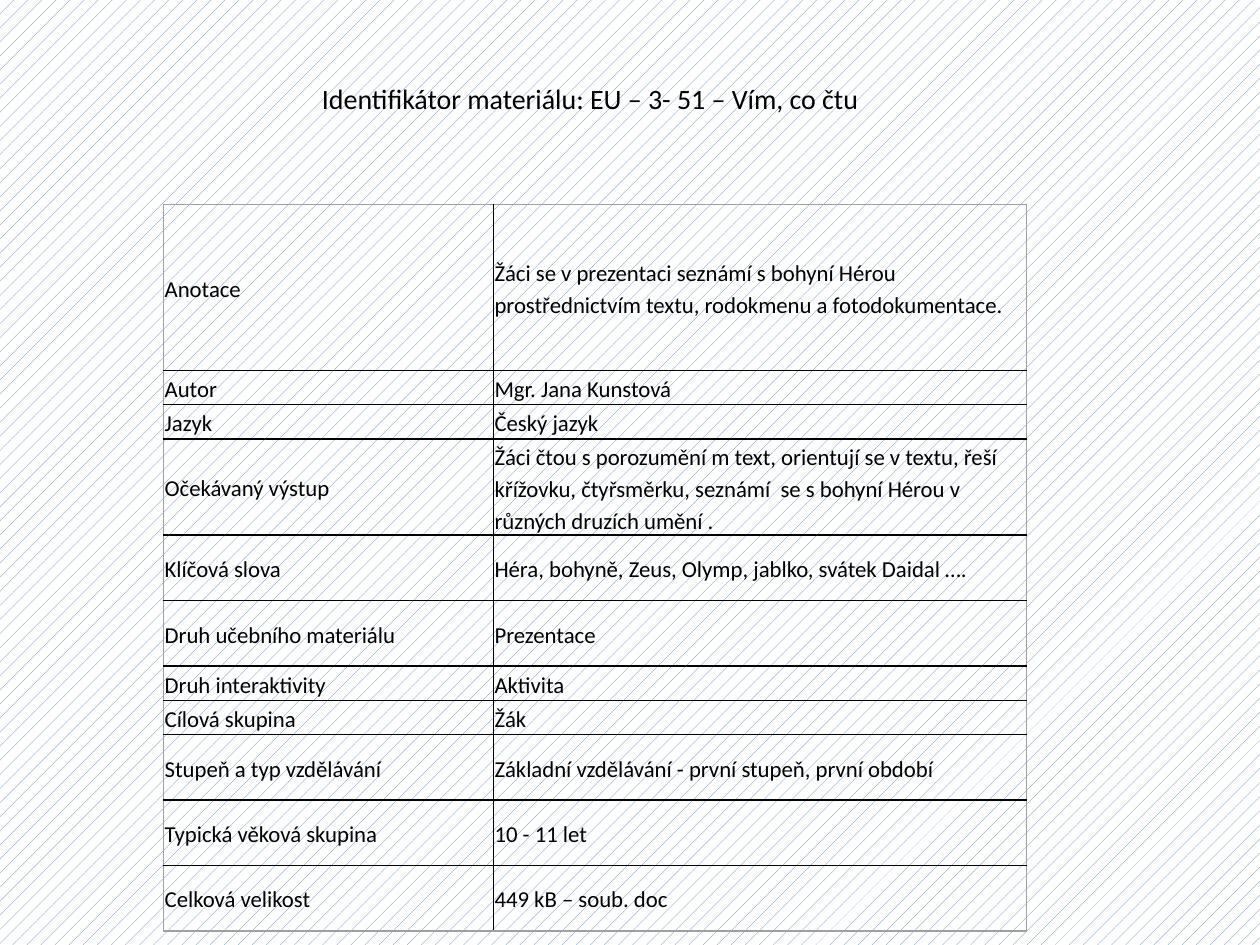
from dataclasses import dataclass

from lxml import etree
from pptx import Presentation
from pptx import util as u
from pptx.dml.color import RGBColor
from pptx.enum import dml, text
from pptx.oxml.ns import qn


@dataclass(frozen=True)
class Theme:
    font: str = "Calibri"
    title_size: int = 16
    cell_size: int = 13
    ink: str = "000000"
    frame: str = "A0A0A0"
    pattern: str = "4F81BD"
    paper: str = "FFFFFF"


THEME = Theme()
TITLE = "Identifikátor materiálu: EU – 3- 51 – Vím, co čtu"

# Row heights in centimetres
TALL, MEDIUM, LOW = 3.35, 1.32, 0.69
COLUMN_WIDTHS = (6.65, 10.74)
ROWS = [
    (TALL, "Anotace", "Žáci se v prezentaci seznámí s bohyní Hérou "
     "prostřednictvím textu, rodokmenu a fotodokumentace."),
    (LOW, "Autor", "Mgr. Jana Kunstová"),
    (LOW, "Jazyk", "Český jazyk"),
    (MEDIUM, "Očekávaný výstup", "Žáci čtou s porozumění m text, orientují se v textu, "
     "řeší křížovku, čtyřsměrku, seznámí  se s bohyní Hérou v různých druzích umění ."),
    (MEDIUM, "Klíčová slova", "Héra, bohyně, Zeus, Olymp, jablko, svátek Daidal …."),
    (MEDIUM, "Druh učebního materiálu", "Prezentace"),
    (LOW, "Druh interaktivity", "Aktivita"),
    (LOW, "Cílová skupina", "Žák"),
    (MEDIUM, "Stupeň a typ vzdělávání", "Základní vzdělávání - první stupeň, první období"),
    (MEDIUM, "Typická věková skupina", "10 - 11 let"),
    (MEDIUM, "Celková velikost", "449 kB – soub. doc"),
]


def set_values(target, values):
    for name, value in values.items():
        setattr(target, name, value)


def format_paragraph(paragraph, size, **values):
    set_values(paragraph, values)
    set_values(paragraph.font, {"name": THEME.font, "size": u.Pt(size), "bold": False})
    paragraph.font.color.rgb = RGBColor.from_string(THEME.ink)


def set_background(slide):
    fill = slide.background.fill
    fill.patterned()
    fill.pattern = dml.MSO_PATTERN.PERCENT_10
    fill.fore_color.rgb = RGBColor.from_string(THEME.pattern)
    fill.back_color.rgb = RGBColor.from_string(THEME.paper)


def set_title(slide):
    title = slide.shapes.title
    set_values(title, {"left": u.Cm(3.5), "top": u.Cm(1.52),
                       "width": u.Cm(16.8), "height": u.Cm(0.94)})
    frame = title.text_frame
    frame.text = TITLE
    set_values(frame, {"word_wrap": True, "vertical_anchor": text.MSO_ANCHOR.TOP,
                       "auto_size": text.MSO_AUTO_SIZE.SHAPE_TO_FIT_TEXT})
    format_paragraph(frame.paragraphs[0], THEME.title_size, alignment=text.PP_ALIGN.CENTER)


def set_borders(cell, outer_sides):
    """Draw black inner rules and grey rules on the table's outer sides."""
    properties = cell._tc.get_or_add_tcPr()
    for position, side in enumerate("LRTB"):
        line = etree.Element(qn(f"a:ln{side}"), w=str(u.Pt(1)))
        fill = etree.SubElement(line, qn("a:solidFill"))
        color = THEME.frame if side in outer_sides else THEME.ink
        etree.SubElement(fill, qn("a:srgbClr"), val=color)
        properties.insert(position, line)


def fill_cell(cell, wording, outer_sides):
    cell.text = wording
    margins = {f"margin_{side}": u.Cm(0.02) for side in ("left", "right", "top", "bottom")}
    set_values(cell, {"vertical_anchor": text.MSO_ANCHOR.MIDDLE, **margins})
    format_paragraph(cell.text_frame.paragraphs[0], THEME.cell_size, line_spacing=1.15)
    cell.fill.background()
    set_borders(cell, outer_sides)


def add_details_table(slide):
    height = sum(row[0] for row in ROWS)
    table = slide.shapes.add_table(len(ROWS), len(COLUMN_WIDTHS), u.Cm(3.3), u.Cm(4.12),
                                   u.Cm(sum(COLUMN_WIDTHS)), u.Cm(height)).table
    set_values(table, {"first_row": False, "horz_banding": False})
    for column, width in zip(table.columns, COLUMN_WIDTHS):
        column.width = u.Cm(width)
    for index, (row_height, *wordings) in enumerate(ROWS):
        table.rows[index].height = u.Cm(row_height)
        vertical = {0: "T", len(ROWS) - 1: "B"}.get(index, "")
        for column, (wording, side) in enumerate(zip(wordings, "LR")):
            fill_cell(table.cell(index, column), wording, vertical + side)


def main():
    presentation = Presentation()
    set_values(presentation, {"slide_width": u.Cm(25.4), "slide_height": u.Cm(19.05)})
    slide = presentation.slides.add_slide(presentation.slide_layouts[5])
    set_background(slide)
    # Heading, then the table of details
    set_title(slide)
    add_details_table(slide)
    presentation.save("out.pptx")


if __name__ == "__main__":
    main()
